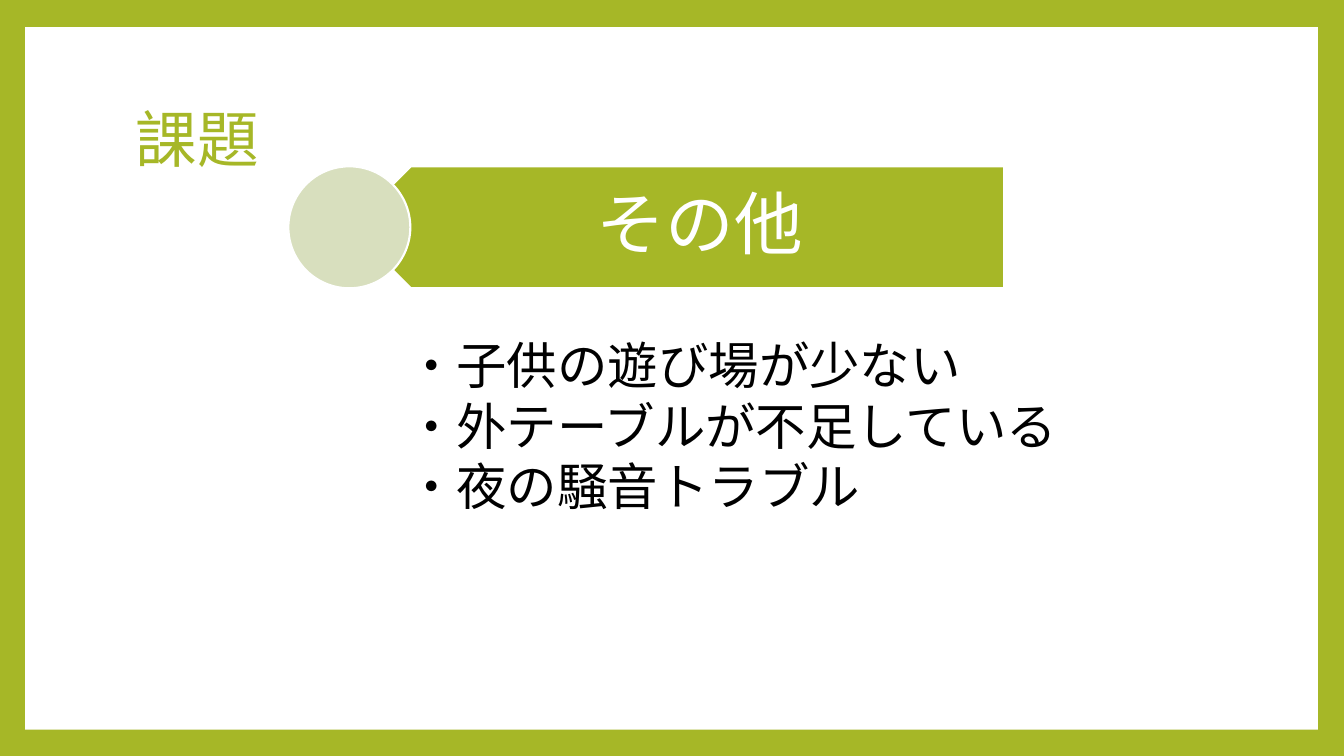
from dataclasses import dataclass

from pptx import Presentation
from pptx.dml.color import RGBColor
from pptx.enum import shapes, text
from pptx.util import Inches, Pt


@dataclass(frozen=True)
class Theme:
    font: str = "Calibri"
    green: str = "A6B727"
    pale: str = "D8DFBE"
    white: str = "FFFFFF"
    black: str = "000000"
    title_size: int = 44
    banner_size: int = 49
    body_size: int = 36
    outline: float = 1.5


class SlideBuilder:
    def __init__(self, page, theme):
        self.page = page
        self.theme = theme

    def background(self, color):
        fill = self.page.background.fill
        fill.solid()
        fill.fore_color.rgb = RGBColor.from_string(color)

    def shape(self, kind, place, color, outline=None):
        shape = self.page.shapes.add_shape(kind, *map(Inches, place))
        shape.shadow.inherit = False
        shape.fill.solid()
        shape.fill.fore_color.rgb = RGBColor.from_string(color)
        if outline:
            shape.line.color.rgb = RGBColor.from_string(outline)
            shape.line.width = Pt(self.theme.outline)
        else:
            shape.line.fill.background()
        return shape

    def text(self, lines, place, size, color, anchor=text.MSO_ANCHOR.TOP,
             align=text.PP_ALIGN.LEFT, spacing=1.0, insets=(0.1, 0.05, 0.1, 0.05)):
        box = self.page.shapes.add_textbox(*map(Inches, place))
        frame = box.text_frame
        frame.word_wrap = True
        frame.vertical_anchor = anchor
        (frame.margin_left, frame.margin_top,
         frame.margin_right, frame.margin_bottom) = map(Inches, insets)
        frame.text = "\n".join(lines)
        for para in frame.paragraphs:
            para.alignment = align
            para.line_spacing = spacing
            for span in para.runs:
                span.font.name = self.theme.font
                span.font.size = Pt(size)
                span.font.color.rgb = RGBColor.from_string(color)
        return box


def main():
    theme = Theme()
    deck = Presentation()
    deck.slide_width, deck.slide_height = Inches(13.33), Inches(7.5)
    page = deck.slides.add_slide(deck.slide_layouts[6])
    builder = SlideBuilder(page, theme)
    middle = text.MSO_ANCHOR.MIDDLE
    preset = shapes.MSO_SHAPE

    # Green frame around a white panel
    builder.background(theme.green)
    builder.shape(preset.RECTANGLE, (0.25, 0.27, 12.82, 6.97), theme.white)

    # Title
    builder.text(["課題"], (1.25, 0.67, 10.8, 1.48), theme.title_size,
                 theme.green, anchor=middle, spacing=0.9)

    # Banner pointing left, with its label and round marker
    top, height = 1.65, 1.21
    banner = builder.shape(preset.PENTAGON, (3.47, top, 6.49, height),
                           theme.green, theme.white)
    banner.rotation = 180
    builder.text(["その他"], (3.77, top, 6.19, height), theme.banner_size,
                 theme.white, anchor=middle, align=text.PP_ALIGN.CENTER,
                 spacing=0.9, insets=(0.53, 0.2, 0.38, 0.2))
    builder.shape(preset.OVAL, (2.86, top, height, height),
                  theme.pale, theme.white)

    # List of issues
    issues = ["・子供の遊び場が少ない", "・外テーブルが不足している", "・夜の騒音トラブル"]
    builder.text(issues, (3.93, 3.27, 6.92, 1.92), theme.body_size, theme.black)

    deck.save("out.pptx")


if __name__ == "__main__":
    main()
